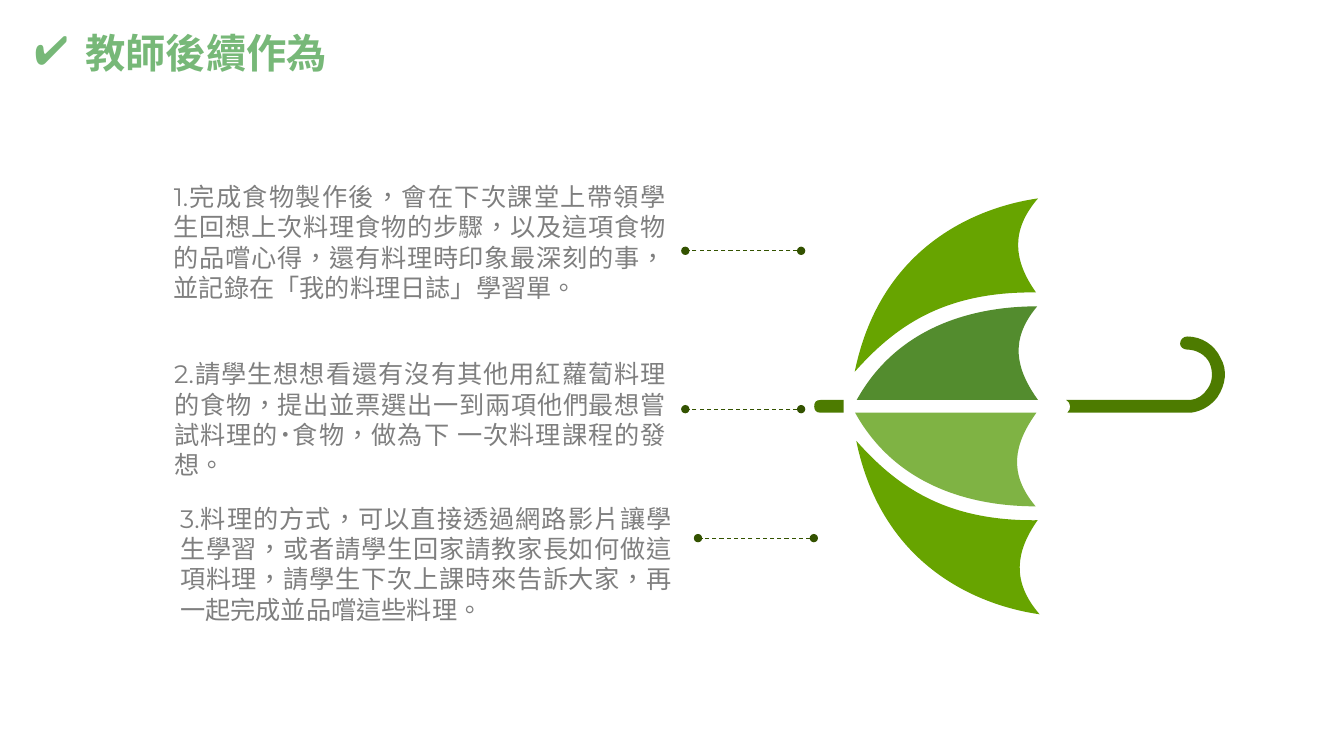
from dataclasses import dataclass

from lxml import etree
from pptx import Presentation
from pptx.dml.color import RGBColor
from pptx.enum.dml import MSO_LINE
from pptx.enum.lang import MSO_LANGUAGE_ID
from pptx.enum.shapes import MSO_CONNECTOR
from pptx.enum.text import MSO_ANCHOR, MSO_AUTO_SIZE, PP_ALIGN
from pptx.oxml.ns import qn
from pptx.util import Cm, Pt

STRAIGHT = MSO_CONNECTOR.STRAIGHT
DASH = MSO_LINE.DASH
TOP, MIDDLE = MSO_ANCHOR.TOP, MSO_ANCHOR.MIDDLE
LEFT, JUSTIFY = PP_ALIGN.LEFT, PP_ALIGN.JUSTIFY
GROW, FIXED = MSO_AUTO_SIZE.SHAPE_TO_FIT_TEXT, MSO_AUTO_SIZE.NONE
CHINESE = MSO_LANGUAGE_ID.TRADITIONAL_CHINESE


@dataclass(frozen=True)
class Theme:
    title: str = "77B878"
    body: str = "7F7F7F"
    outer_panel: str = "67A400"
    upper_panel: str = "538C2E"
    lower_panel: str = "7FB344"
    handle: str = "4D7B00"
    connector: str = "335200"
    title_size: float = 28.8
    body_size: float = 18
    font: str = "Montserrat"
    second_font: str = "Roboto"
    chinese_font: str = "Noto Sans CJK TC"


def mirrored(outline, shift):
    """The outline flipped across the umbrella's shaft."""
    return [tuple(2 * SHAFT_Y - value if index % 2 else value + shift
                  for index, value in enumerate(segment)) for segment in outline]


def write_text(paragraph, text, *, font, size, color, bold=False):
    run = paragraph.add_run()
    run.text = text
    run.font.name = font
    run.font.size = Pt(size)
    run.font.bold = bold
    run.font.color.rgb = RGBColor.from_string(color)
    run.font.language_id = CHINESE


class SlideBuilder:
    def __init__(self, slide, theme):
        self.slide = slide
        self.theme = theme

    def outline(self, segments, color):
        """Filled outline: pairs are corners, sextuples are curves."""
        corners = [(Cm(segment[-2]), Cm(segment[-1])) for segment in segments]
        builder = self.slide.shapes.build_freeform(*corners[0])
        builder.add_line_segments(corners[1:], close=True)
        shape = builder.convert_to_shape()
        # Bend the sides that have control points
        sides = list(shape._element.iter(qn("a:lnTo")))
        for side, segment in zip(sides, segments[1:]):
            if len(segment) == 6:
                curve = etree.Element(qn("a:cubicBezTo"))
                for x, y in zip(segment[::2], segment[1::2]):
                    point = etree.SubElement(curve, qn("a:pt"))
                    point.set("x", str(Cm(x) - shape.left))
                    point.set("y", str(Cm(y) - shape.top))
                side.getparent().replace(side, curve)
        shape.shadow.inherit = False
        shape.fill.solid()
        shape.fill.fore_color.rgb = RGBColor.from_string(color)
        shape.line.fill.background()

    def dotted_link(self, left, top, width):
        line = self.slide.shapes.add_connector(
            STRAIGHT, Cm(left + width), Cm(top), Cm(left), Cm(top))
        line.line.color.rgb = RGBColor.from_string(self.theme.connector)
        line.line.width = Pt(0.75)
        line.line.dash_style = DASH
        line_xml = line.line._get_or_add_ln()
        for end in ("a:headEnd", "a:tailEnd"):
            etree.SubElement(line_xml, qn(end)).set("type", "oval")
        etree.SubElement(line._element.spPr, qn("a:effectLst"))

    def text_box(self, box, *, insets, anchor, auto_size, align):
        shape = self.slide.shapes.add_textbox(*(Cm(value) for value in box))
        frame = shape.text_frame
        frame.word_wrap = True
        frame.auto_size = auto_size
        frame.vertical_anchor = anchor
        frame.margin_left = frame.margin_right = Cm(insets[0])
        frame.margin_top = frame.margin_bottom = Cm(insets[1])
        paragraph = frame.paragraphs[0]
        paragraph.alignment = align
        return paragraph

    def title(self, text, box):
        theme = self.theme
        paragraph = self.text_box(box, insets=(0.25, 0.13), anchor=MIDDLE,
                                  auto_size=FIXED, align=LEFT)
        paragraph.line_spacing = 0.9
        properties = paragraph._p.get_or_add_pPr()
        properties.set("marL", str(Cm(1.27)))
        properties.set("indent", str(Cm(-1.27)))
        bullet_color = etree.SubElement(properties, qn("a:buClr"))
        etree.SubElement(bullet_color, qn("a:srgbClr")).set("val", theme.title)
        etree.SubElement(properties, qn("a:buSzPct")).set("val", "125000")
        etree.SubElement(properties, qn("a:buChar")).set("char", "✔")
        write_text(paragraph, text, font=theme.font, size=theme.title_size,
                   color=theme.title, bold=True)

    def body(self, runs, box):
        theme = self.theme
        paragraph = self.text_box(box, insets=(0.33, 0.18), anchor=TOP,
                                  auto_size=GROW, align=JUSTIFY)
        for text, font in runs:
            write_text(paragraph, text, font=font, size=theme.body_size, color=theme.body)


# Umbrella outlines, in centimetres
SHAFT_Y = 10.24
OUTER_PANEL = [
    (21.54, 9.37), (22.2, 6.15, 24.69, 5.21, 26.16, 5),
    (25.45, 5.82, 25.55, 6.58, 26.11, 7.37), (23.75, 7.34, 22.53, 8.26, 21.54, 9.37)]
INNER_PANEL = [
    (21.59, 10.08), (22.66, 8.15, 24.66, 7.72, 26.14, 7.72),
    (25.43, 8.56, 25.6, 9.3, 26.16, 10.08)]
TIP = [
    (20.68, 10.08), (21.26, 10.08), (21.26, 10.4), (20.68, 10.4),
    (20.57, 10.4, 20.52, 10.34, 20.52, 10.24), (20.52, 10.13, 20.57, 10.08, 20.68, 10.08)]
HANDLE = [
    (29.92, 8.48), (30.28, 8.48, 30.61, 8.69, 30.76, 9.02),
    (30.94, 9.32, 30.89, 9.7, 30.68, 10.01), (30.53, 10.21, 30.3, 10.36, 30.02, 10.4),
    (26.9, 10.4), (26.95, 10.36, 26.97, 10.29, 26.97, 10.24),
    (26.97, 10.16, 26.92, 10.11, 26.87, 10.08), (30, 10.08),
    (30.18, 10.06, 30.33, 9.96, 30.43, 9.8), (30.56, 9.63, 30.58, 9.37, 30.48, 9.14),
    (30.38, 8.94, 30.15, 8.81, 29.92, 8.81), (29.82, 8.81, 29.74, 8.74, 29.74, 8.66),
    (29.74, 8.56, 29.82, 8.48, 29.92, 8.48)]


def main():
    presentation = Presentation()
    presentation.slide_width, presentation.slide_height = Cm(33.87), Cm(19.05)
    slide = presentation.slides.add_slide(presentation.slide_layouts[6])
    theme = Theme()
    builder = SlideBuilder(slide, theme)

    # Umbrella
    for segments, color in (
            (OUTER_PANEL, theme.outer_panel),
            (INNER_PANEL, theme.upper_panel),
            (mirrored(INNER_PANEL, -0.04), theme.lower_panel),
            (mirrored(OUTER_PANEL, 0.04), theme.outer_panel),
            (TIP, theme.handle),
            (HANDLE, theme.handle)):
        builder.outline(segments, color)

    # Links between the steps and the umbrella
    for left, top in ((17.27, 6.32), (17.27, 10.31), (17.59, 13.56)):
        builder.dotted_link(left, top, 2.92)

    # Title and the three steps
    builder.title("教師後續作為", (0.63, 0.74, 29.21, 1.3))
    builder.body([
        ("1.完成食物製作後，會在下次課堂上帶領學生回想上次料理食物的步驟，"
         "以及這項食物的品嚐心得，還有料理時印象最深刻的事，並記錄在", theme.font),
        ("「我的料理日誌", theme.chinese_font),
        ("」學習單。", theme.second_font)], (4.05, 4.39, 13.06, 3.43))
    builder.body([
        ("2.請學生想想看還有沒有其他用紅蘿蔔料理的食物", theme.font),
        ("，提出並票選出一到兩項他們最想嘗試料理的˙食物，"
         "做為下 一次料理課程的發想。", theme.second_font)], (4.06, 8.86, 13.06, 2.64))
    builder.body([
        ("3.料理的方式，可以直接透過網路影片讓學生學習，或者請學生回家請教家長"
         "如何做這項料理，請學生下次上課時來告訴大家，再一起完成並品嚐這些料理。",
         theme.font)], (4.21, 12.5, 13.06, 3.43))

    presentation.save("out.pptx")


if __name__ == "__main__":
    main()
